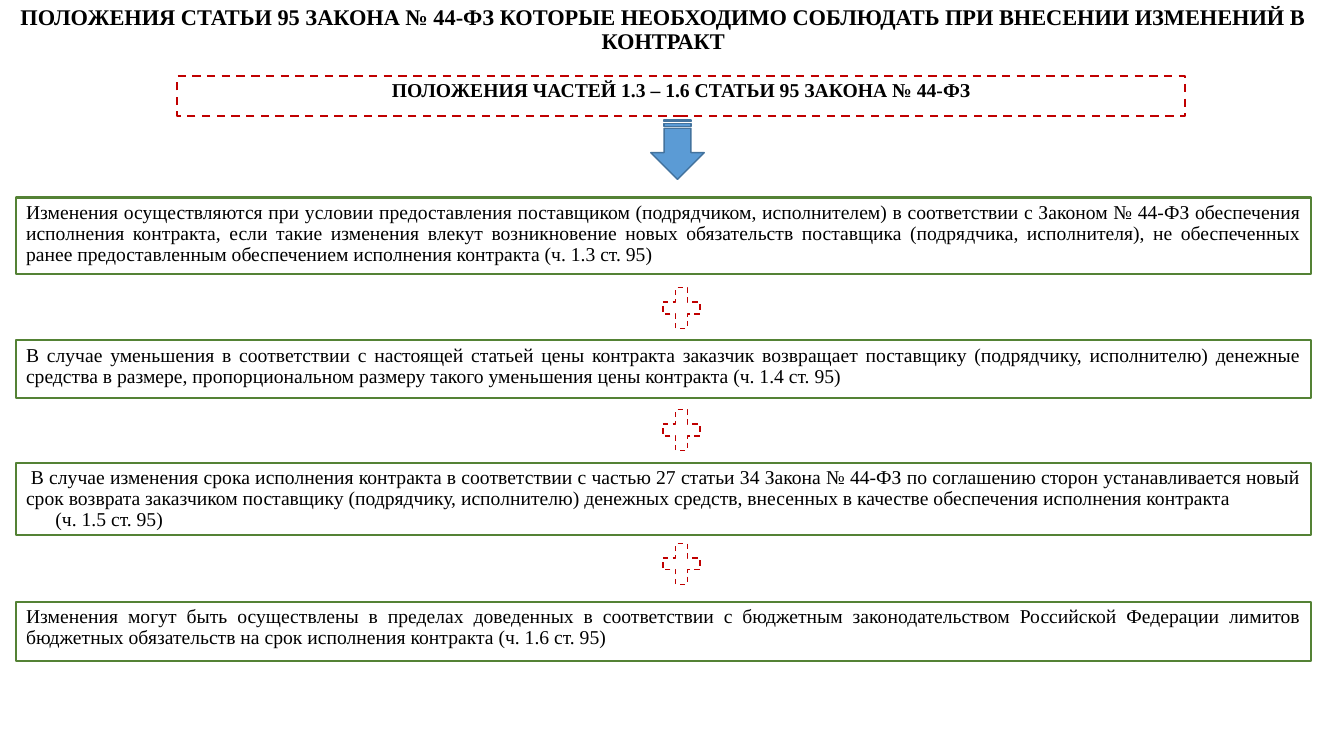
"""Build a slide on the provisions of Article 95 that govern contract changes."""
from pptx import Presentation
from pptx import util as u
from pptx.dml.color import RGBColor
from pptx.enum import dml, shapes, text

TITLE = "ПОЛОЖЕНИЯ СТАТЬИ 95 ЗАКОНА № 44-ФЗ КОТОРЫЕ НЕОБХОДИМО СОБЛЮДАТЬ ПРИ ВНЕСЕНИИ ИЗМЕНЕНИЙ В КОНТРАКТ"
SUBTITLE = "ПОЛОЖЕНИЯ ЧАСТЕЙ 1.3 – 1.6 СТАТЬИ 95 ЗАКОНА № 44-ФЗ"
PROVISIONS = [
    {"top": 141.1, "height": 54.7, "lines": [
        ("Изменения осуществляются при условии предоставления поставщиком (подрядчиком, исполнителем) "
         "в соответствии с Законом № 44-ФЗ обеспечения исполнения контракта, если такие изменения влекут "
         "возникновение новых обязательств поставщика (подрядчика, исполнителя), не обеспеченных ранее "
         "предоставленным обеспечением исполнения контракта (ч. 1.3 ст. 95)", 0)]},
    {"top": 243.1, "height": 41, "lines": [
        ("В случае уменьшения в соответствии с настоящей статьей цены контракта заказчик возвращает "
         "поставщику (подрядчику, исполнителю) денежные средства в размере, пропорциональном размеру "
         "такого уменьшения цены контракта (ч. 1.4 ст. 95)", 0)]},
    {"top": 330.5, "height": 52, "lines": [
        ("В случае изменения срока исполнения контракта в соответствии с частью 27 статьи 34 Закона "
         "№ 44-ФЗ по соглашению сторон устанавливается новый срок возврата заказчиком поставщику "
         "(подрядчику, исполнителю) денежных средств, внесенных в качестве обеспечения исполнения "
         "контракта", 3.5),
        ("(ч. 1.5 ст. 95)", 21)]},
    {"top": 429.8, "height": 42.5, "lines": [
        ("Изменения могут быть осуществлены в пределах доведенных в соответствии с бюджетным "
         "законодательством Российской Федерации лимитов бюджетных обязательств на срок исполнения "
         "контракта (ч. 1.6 ст. 95)", 0)]},
]
PLUS_TOPS = [200.2, 287.3, 383]

THEME = {
    "font": "Times New Roman", "title": 16, "body": 14, "ink": "000000",
    "red": "C00000", "green": "548235", "blue": "5B9BD5", "navy": "43739E",
}
KINDS = shapes.MSO_SHAPE
ALIGN = text.PP_ALIGN


def colour(name):
    return RGBColor.from_string(THEME[name])


def add_box(page, kind, frame, line, weight, fill=None, dashed=False):
    box = page.shapes.add_shape(kind, *map(u.Pt, frame))
    box.shadow.inherit = False
    if fill:
        box.fill.solid()
        box.fill.fore_color.rgb = colour(fill)
    else:
        box.fill.background()
    box.line.color.rgb = colour(line)
    box.line.width = u.Pt(weight)
    if dashed:
        box.line.dash_style = dml.MSO_LINE.DASH
    return box


def write(box, lines, size="body", bold=False, align=ALIGN.CENTER,
          anchor=text.MSO_ANCHOR.TOP, before=10):
    frame = box.text_frame
    frame.word_wrap = True
    frame.vertical_anchor = anchor
    for index, (words, indent) in enumerate(lines):
        para = frame.add_paragraph() if index else frame.paragraphs[0]
        para.alignment = align
        para.line_spacing = 0.9
        para.space_before = u.Pt(0 if index else before)
        if indent:
            para._p.get_or_add_pPr().set("indent", str(u.Pt(indent)))
        span = para.add_run()
        span.text = words
        span.font.name = THEME["font"]
        span.font.size = u.Pt(THEME[size])
        span.font.bold = bold
        span.font.color.rgb = colour("ink")


def main():
    deck = Presentation()
    deck.slide_width, deck.slide_height = u.Pt(960), u.Pt(540)
    page = deck.slides.add_slide(deck.slide_layouts[6])

    title = page.shapes.add_textbox(*map(u.Pt, (0.7, 0, 946, 42.5)))
    write(title, [(TITLE, 0)], size="title", bold=True,
          anchor=text.MSO_ANCHOR.BOTTOM, before=0)
    subtitle = add_box(page, KINDS.RECTANGLE, (126.7, 54.2, 720, 29), "red", 1.5, dashed=True)
    write(subtitle, [(SUBTITLE, 0)], bold=True)
    arrow = add_box(page, KINDS.STRIPED_RIGHT_ARROW, (462.7, 87.8, 42.5, 38.2),
                    "navy", 1, fill="blue")
    arrow.rotation = 90

    for provision in PROVISIONS:
        frame = (11.5, provision["top"], 925.2, provision["height"])
        box = add_box(page, KINDS.RECTANGLE, frame, "green", 1.5)
        write(box, provision["lines"], align=ALIGN.JUSTIFY)
    for top in PLUS_TOPS:
        add_box(page, KINDS.MATH_PLUS, (468.7, top, 36, 39.6), "red", 1, dashed=True)

    deck.save("out.pptx")


if __name__ == "__main__":
    main()
